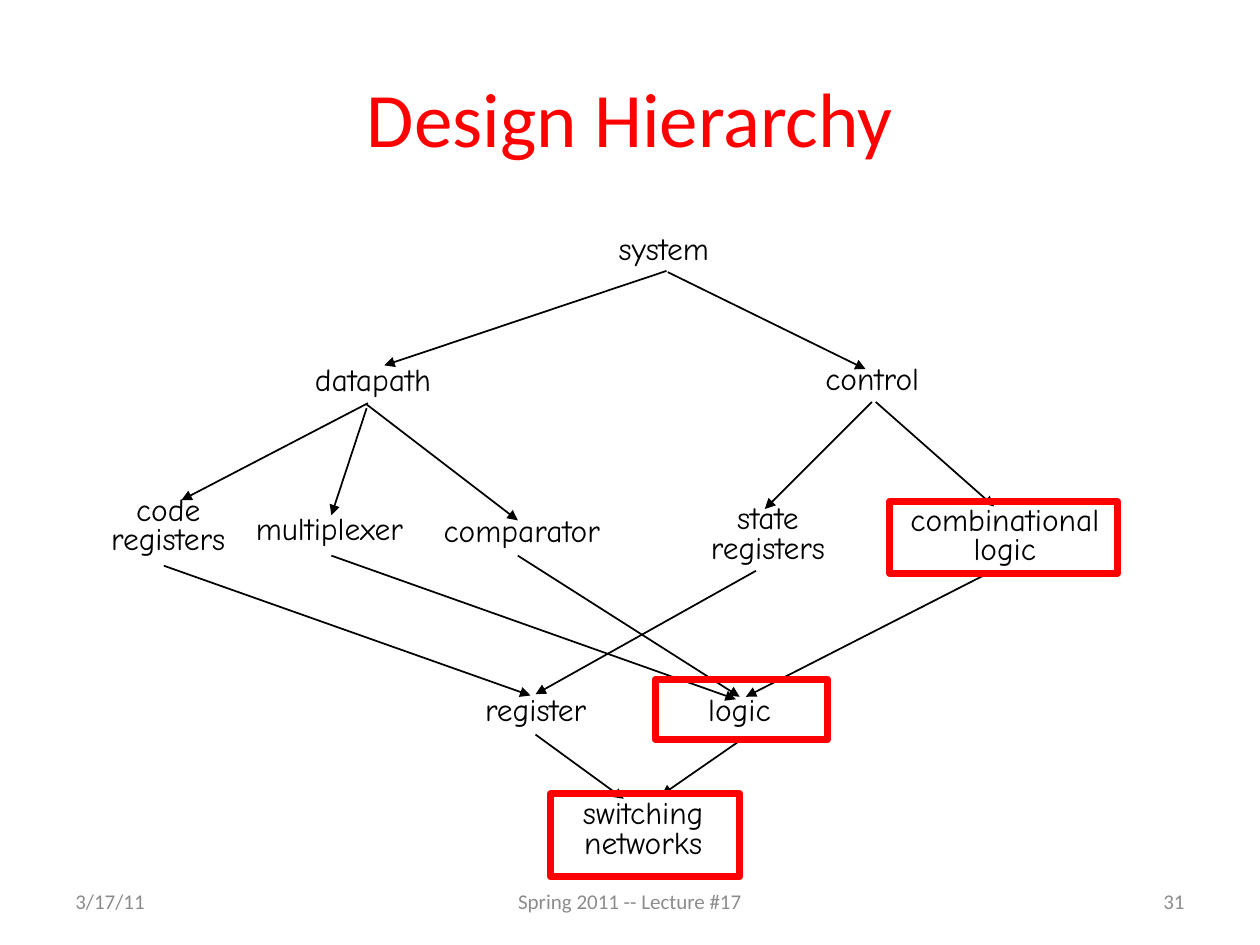
from lxml import etree
from pptx import Presentation
from pptx import util as u
from pptx.dml.color import RGBColor
from pptx.enum import shapes, text
from pptx.oxml.ns import qn

COLUMNS, ROWS = 100, 75
CELL = u.Inches(0.1)
BLACK, RED, GRAY = "000000", "FF0000", "8C8C8C"
LEFT, CENTER, RIGHT = text.PP_ALIGN.LEFT, text.PP_ALIGN.CENTER, text.PP_ALIGN.RIGHT
BOTTOM_SIDE = 2

NODES = [
    ("system", 40.9, 0.5, 11.2),
    ("datapath", 16.8, 10.9, 13.3),
    ("control", 57.3, 10.8, 11.1),
    ("state\nregisters", 44.6, 21.9, 16.7),
    ("combinational\nlogic", 59.9, 22, 23.7),
    ("multiplexer", 12.1, 22.7, 14.9),
    ("comparator", 27, 22.9, 15.2),
    ("code\nregisters", 0.3, 21.2, 10.1),
    ("register", 30.3, 37.1, 11.6),
    ("logic", 48, 37.1, 9.2),
    ("switching\nnetworks", 32.9, 45.3, 20.3),
]

ARROWS = {
    ("system", "control"): (45, 3.6, 60.7, 11.3),
    ("system", "datapath"): (44.9, 3.5, 22.5, 11),
    ("datapath", "multiplexer"): (21.1, 14.4, 18.3, 22.9),
    ("datapath", "comparator"): (21.1, 14.1, 33.1, 23.3),
    ("datapath", "code registers"): (21.2, 14, 6.4, 21.7),
    ("code registers", "register"): (5, 26.9, 34.1, 37.2),
    ("state registers", "register"): (52, 27.3, 34.5, 37.1),
    ("control", "state registers"): (61.2, 13.9, 52.7, 22.4),
    ("control", "combinational logic"): (61.5, 13.9, 70.9, 22.2),
    ("comparator", "logic"): (33.1, 26.1, 50.7, 37.3),
    ("multiplexer", "logic"): (18.3, 26.1, 50.4, 37.5),
    ("combinational logic", "logic"): (70.8, 27.3, 51.2, 37.3),
    ("logic", "switching networks"): (50.7, 40.5, 44.5, 45.1),
    ("register", "switching networks"): (34.5, 40.3, 41.5, 45.4),
}

HIGHLIGHTS = {
    "logic": (44, 35.9, 13.7, 4.8),
    "switching networks": (35.7, 45, 15, 6.6),
    "combinational logic": (62.6, 21.8, 18.1, 5.7),
}


def color(value):
    return RGBColor.from_string(value)


def grid(*lengths):
    return [round(length * CELL) for length in lengths]


def add_words(paragraph, words, size, font, tint):
    for index, line in enumerate(words.split("\n")):
        if index:
            paragraph.add_line_break()
        run = paragraph.add_run()
        run.text = line
        run.font.size = u.Pt(size)
        run.font.name = font
        run.font.color.rgb = color(tint)


def add_title(slide, box, words):
    title = slide.shapes.title
    title.left, title.top, title.width, title.height = grid(*box)
    title.text_frame.vertical_anchor = text.MSO_ANCHOR.MIDDLE
    paragraph = title.text_frame.paragraphs[0]
    paragraph.alignment = CENTER
    add_words(paragraph, words, 44, "Calibri", RED)


def add_footer(slide, box):
    left, top, width, height = box
    parts = [
        ("3/17/11", 0, 23.3, LEFT),
        ("Spring 2011 -- Lecture #17", (width - 31.7) / 2, 31.7, CENTER),
        ("31", width - 23.3, 23.3, RIGHT),
    ]
    for words, offset, part_width, alignment in parts:
        shape = slide.shapes.add_textbox(*grid(left + offset, top, part_width, height))
        frame = shape.text_frame
        frame.word_wrap = True
        frame.vertical_anchor = text.MSO_ANCHOR.MIDDLE
        frame.paragraphs[0].alignment = alignment
        add_words(frame.paragraphs[0], words, 12, "Calibri", GRAY)


def add_node(slide, left, top, width, words):
    two_lines = "\n" in words
    shape = slide.shapes.add_textbox(*grid(left, top, width, 6 if two_lines else 3.7))
    frame = shape.text_frame
    frame.word_wrap = True
    frame.margin_left = frame.margin_right = u.Inches(0.02)
    frame.margin_top = frame.margin_bottom = u.Inches(0.03)
    paragraph = frame.paragraphs[0]
    paragraph.alignment = CENTER if two_lines else LEFT
    paragraph.line_spacing = u.Pt(17)
    add_words(paragraph, words, 18, "Comic Neue", BLACK)


def add_arrow(slide, ends):
    arrow = slide.shapes.add_connector(shapes.MSO_CONNECTOR.STRAIGHT, *grid(*ends))
    arrow.line.color.rgb = color(BLACK)
    arrow.line.width = u.Pt(1)
    etree.SubElement(arrow.line._get_or_add_ln(), qn("a:tailEnd"), type="triangle")
    etree.SubElement(arrow._element.spPr, qn("a:effectLst"))
    return arrow


def add_highlight(slide, box):
    frame = slide.shapes.add_shape(shapes.MSO_SHAPE.RECTANGLE, *grid(*box))
    frame.shadow.inherit = False
    frame.fill.background()
    frame.line.color.rgb = color(RED)
    frame.line.width = u.Pt(4)
    return frame


def add_hierarchy(slide, box):
    left, top = box[:2]
    for words, x, y, width in NODES:
        add_node(slide, left + x, top + y, width, words)
    arrows = {
        pair: add_arrow(slide, (left + x1, top + y1, left + x2, top + y2))
        for pair, (x1, y1, x2, y2) in ARROWS.items()
    }
    highlights = {
        name: add_highlight(slide, (left + x, top + y, width, height))
        for name, (x, y, width, height) in HIGHLIGHTS.items()
    }
    arrows["logic", "switching networks"].begin_connect(highlights["logic"], BOTTOM_SIDE)


def main():
    presentation = Presentation()
    presentation.slide_width, presentation.slide_height = grid(COLUMNS, ROWS)
    slide = presentation.slides.add_slide(presentation.slide_layouts[5])
    add_title(slide, (5, 3, 90, 12.5), "Design Hierarchy")
    add_hierarchy(slide, (8, 18, 84, 52))
    add_footer(slide, (5, 69.5, 90, 4))
    presentation.save("out.pptx")


if __name__ == "__main__":
    main()
